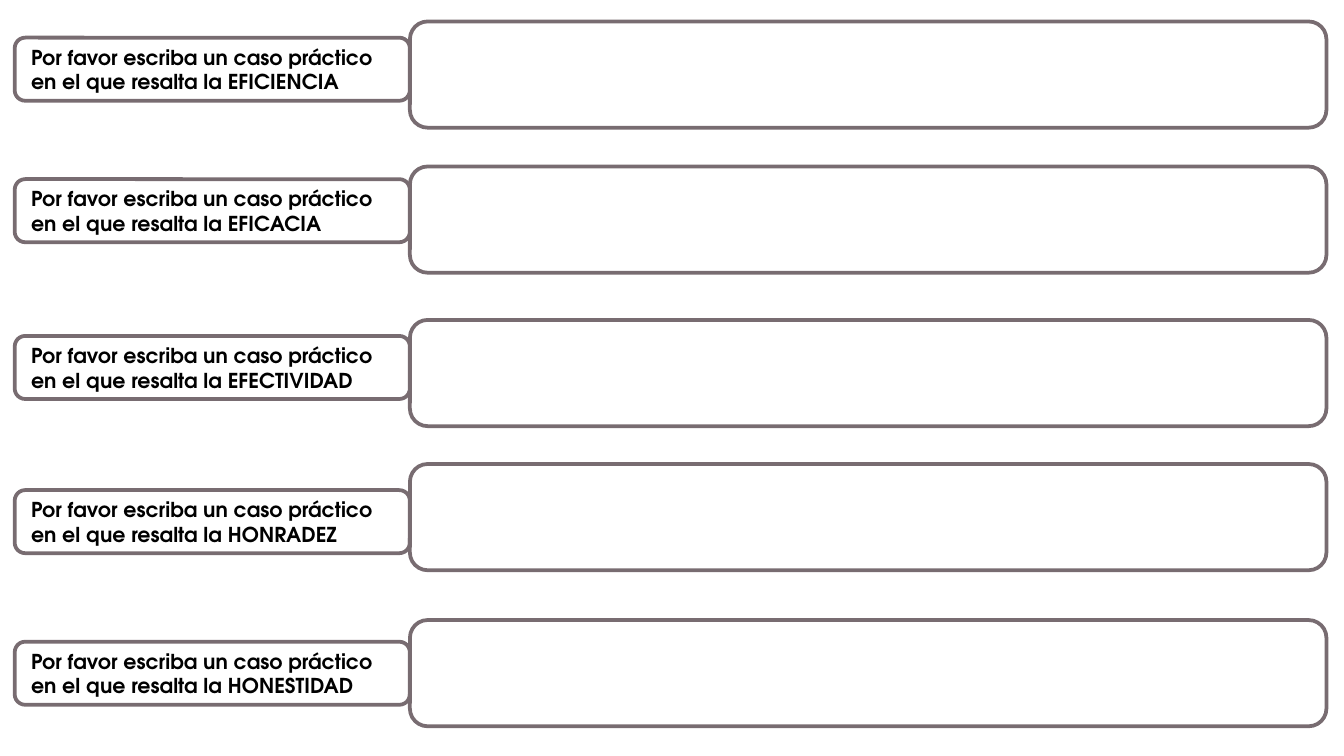
from dataclasses import dataclass

import pptx
import pptx.dml.color
import pptx.enum.shapes
import pptx.enum.text
import pptx.presentation
import pptx.shapes.autoshape
import pptx.slide
import pptx.util

COLOURS = {"fill": "FFFFFF", "outline": "786C71", "text": "000000"}
FONT = "TeX Gyre Adventor"
PROMPT = "Por favor escriba un caso práctico en el que resalta la "

LABEL_LEFT, LABEL_WIDTH, LABEL_HEIGHT = 7.9, 211.7, 33.8
ANSWER_LEFT, ANSWER_WIDTH, ANSWER_HEIGHT = LABEL_LEFT + LABEL_WIDTH, 491, 56.9


@dataclass(frozen=True)
class Exercise:
    principle: str
    label_top: float
    answer_top: float


EXERCISES = [
    Exercise("EFICIENCIA", 20.2, 11.5),
    Exercise("EFICACIA", 96, 89.2),
    Exercise("EFECTIVIDAD", 180, 171.4),
    Exercise("HONRADEZ", 262.6, 248.6),
    Exercise("HONESTIDAD", 343.8, 332.2),
]


def colour(name: str) -> pptx.dml.color.RGBColor:
    return pptx.dml.color.RGBColor.from_string(COLOURS[name])


def add_box(
    slide: pptx.slide.Slide, left: float, top: float, width: float, height: float
) -> pptx.shapes.autoshape.Shape:
    shape = slide.shapes.add_shape(
        pptx.enum.shapes.MSO_SHAPE.ROUNDED_RECTANGLE,
        *(pptx.util.Pt(length) for length in (left, top, width, height)),
    )
    shape.shadow.inherit = False
    shape.fill.solid()
    shape.fill.fore_color.rgb = colour("fill")
    shape.line.color.rgb = colour("outline")
    shape.line.width = pptx.util.Pt(2)
    return shape


def add_label(slide: pptx.slide.Slide, exercise: Exercise) -> None:
    shape = add_box(slide, LABEL_LEFT, exercise.label_top, LABEL_WIDTH, LABEL_HEIGHT)
    text_frame = shape.text_frame
    text_frame.word_wrap = True
    text_frame.vertical_anchor = pptx.enum.text.MSO_ANCHOR.MIDDLE
    paragraph = text_frame.paragraphs[0]
    paragraph.alignment = pptx.enum.text.PP_ALIGN.LEFT
    run = paragraph.add_run()
    run.text = PROMPT + exercise.principle
    run.font.name = FONT
    run.font.size = pptx.util.Pt(11)
    run.font.bold = True
    run.font.color.rgb = colour("text")


def build_presentation() -> pptx.presentation.Presentation:
    presentation = pptx.Presentation()
    presentation.slide_width = pptx.util.Pt(720)
    presentation.slide_height = pptx.util.Pt(405)
    slide = presentation.slides.add_slide(presentation.slide_layouts[6])
    for exercise in EXERCISES:
        add_label(slide, exercise)
    for exercise in EXERCISES:
        add_box(slide, ANSWER_LEFT, exercise.answer_top, ANSWER_WIDTH, ANSWER_HEIGHT)
    return presentation


if __name__ == "__main__":
    build_presentation().save("out.pptx")
